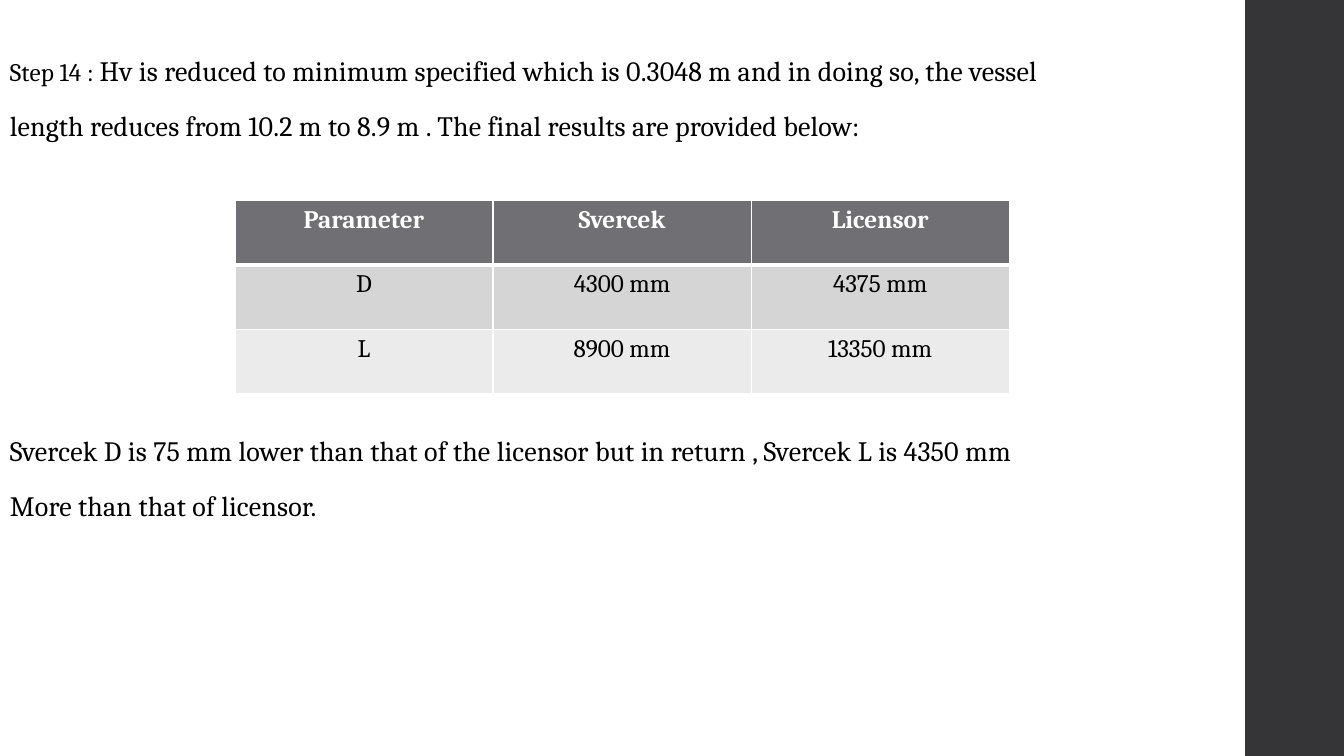
from dataclasses import dataclass

from lxml import etree
from pptx import Presentation
from pptx.dml.color import RGBColor
from pptx.enum.shapes import MSO_SHAPE as Shape
from pptx.enum.text import PP_ALIGN as Align
from pptx.oxml.ns import qn
from pptx.util import Inches, Pt


@dataclass(frozen=True)
class Theme:
    font: str = "Cambria"
    ink: str = "000000"
    white: str = "FFFFFF"
    side_band: str = "353537"
    row_fills: tuple = ("6F6F74", "D5D5D6", "EBEBEB")
    body_size: int = 20
    small_size: int = 18
    thin_border: int = 1
    header_border: int = 3


class SlideBuilder:
    def __init__(self, slide, theme):
        self.slide = slide
        self.theme = theme

    def add_run(self, paragraph, text, size, color, bold=False):
        run = paragraph.add_run()
        run.text = text
        font = run.font
        font.name = self.theme.font
        font.size = Pt(size)
        font.bold = bold
        font.color.rgb = RGBColor.from_string(color)
        return run

    def add_band(self, left, top, width, height):
        band = self.slide.shapes.add_shape(
            Shape.RECTANGLE, Inches(left), Inches(top), Inches(width), Inches(height))
        band.shadow.inherit = False
        band.fill.solid()
        band.fill.fore_color.rgb = RGBColor.from_string(self.theme.side_band)
        band.line.fill.background()

    def add_text(self, left, top, width, height, lines):
        """Write one paragraph per line; each line is a list of (text, size)."""
        box = self.slide.shapes.add_textbox(
            Inches(left), Inches(top), Inches(width), Inches(height))
        frame = box.text_frame
        frame.word_wrap = True
        for index, line in enumerate(lines):
            paragraph = frame.add_paragraph() if index else frame.paragraphs[0]
            paragraph.line_spacing = 0.95
            paragraph.space_before = Pt(14 if index else 0)
            paragraph.space_after = Pt(2)
            for text, size in line:
                run = self.add_run(paragraph, text, size, self.theme.ink)
                run.font._element.set("spc", "10")

    def add_border(self, cell, side, width):
        properties = cell._tc.get_or_add_tcPr()
        line = etree.SubElement(properties, qn(f"a:ln{side}"), w=str(Pt(width)))
        fill = etree.SubElement(line, qn("a:solidFill"))
        etree.SubElement(fill, qn("a:srgbClr"), val=self.theme.white)

    def add_table(self, left, top, column_width, row_height, rows):
        theme = self.theme
        column_count = len(rows[0])
        table = self.slide.shapes.add_table(
            len(rows), column_count, Inches(left), Inches(top),
            Inches(column_width * column_count), Inches(row_height * len(rows))).table
        for row_index, values in enumerate(rows):
            header = row_index == 0
            thick_side = {0: "B", 1: "T"}.get(row_index)
            for column_index, value in enumerate(values):
                cell = table.cell(row_index, column_index)
                for side in "LRTB":
                    thick = side == thick_side
                    self.add_border(
                        cell, side, theme.header_border if thick else theme.thin_border)
                cell.fill.solid()
                cell.fill.fore_color.rgb = RGBColor.from_string(theme.row_fills[row_index])
                paragraph = cell.text_frame.paragraphs[0]
                paragraph.alignment = Align.CENTER
                self.add_run(paragraph, value, theme.small_size,
                             theme.white if header else theme.ink, header)


def main():
    presentation = Presentation()
    presentation.slide_width = Inches(13.33)
    presentation.slide_height = Inches(7.5)
    theme = Theme()
    slide = presentation.slides.add_slide(presentation.slide_layouts[6])
    builder = SlideBuilder(slide, theme)

    builder.add_band(12.35, 0, 1, 7.5)
    builder.add_text(0, 0.51, 12.34, 1.1, [
        [("Step 14 : ", theme.small_size),
         ("Hv is reduced to minimum specified which is 0.3048 m and in doing so, the vessel",
          theme.body_size)],
        [("length reduces from 10.2 m to 8.9 m . The final results are provided below:",
          theme.body_size)],
    ])
    builder.add_table(2.33, 1.99, 2.56, 0.64, [
        ("Parameter", "Svercek", "Licensor"),
        ("D", "4300 mm", "4375 mm"),
        ("L", "8900 mm", "13350 mm"),
    ])
    builder.add_text(0, 4.28, 12.34, 1.1, [
        [("Svercek D is 75 mm lower than that of the licensor but in return , "
          "Svercek L is 4350 mm", theme.body_size)],
        [("More than that of licensor.", theme.body_size)],
    ])
    presentation.save("out.pptx")


if __name__ == "__main__":
    main()
